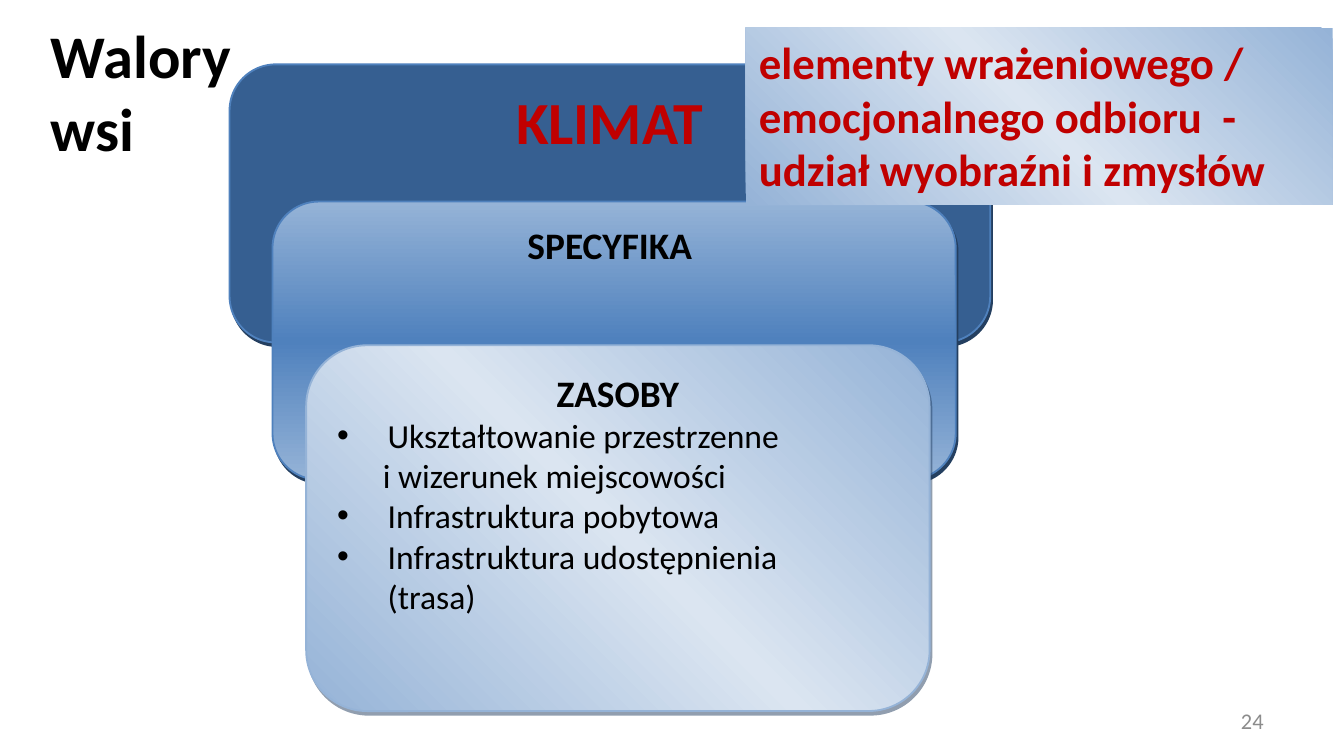
from copy import deepcopy

from lxml import etree
from pptx import Presentation
from pptx.dml.color import RGBColor
from pptx.enum import shapes, text
from pptx.oxml.ns import qn
from pptx.util import Pt

COLORS = {
    "navy": "365F91",
    "blue": "4F81BD",
    "soft": "95B3D7",
    "pale": "DBE5F1",
    "shade": "243F60",
    "red": "C00000",
    "black": "000000",
    "gray": "8C8C8C",
}
FONT = "Calibri"
BULLET_INDENT = 27
RESOURCES = [
    ("Ukształtowanie przestrzenne", True),
    ("i wizerunek miejscowości", False),
    ("Infrastruktura pobytowa", True),
    ("Infrastruktura udostępnienia \v(trasa)", True),
]


def color(name):
    return RGBColor.from_string(COLORS[name])


def format_paragraph(paragraph, size, color_name, bold=False, align=text.PP_ALIGN.LEFT):
    paragraph.alignment = align
    for run in paragraph.runs:
        run.font.name = FONT
        run.font.size = Pt(size)
        run.font.bold = bold
        run.font.color.rgb = color(color_name)


def add_plain_shape(parent, kind, left, top, width, height):
    shape = parent.add_shape(kind, Pt(left), Pt(top), Pt(width), Pt(height))
    shape.shadow.inherit = False
    shape.line.fill.background()
    shape.text_frame.word_wrap = True
    shape.text_frame.vertical_anchor = text.MSO_ANCHOR.TOP
    return shape


def fill_gradient(shape, names, angle):
    """Spread three colours evenly; the angle runs counter-clockwise."""
    shape.fill.gradient()
    shape.fill.gradient_angle = angle
    stop_list = shape.element.spPr.find(qn("a:gradFill")).find(qn("a:gsLst"))
    stop_list.insert(1, deepcopy(stop_list[0]))
    for index, (stop, name) in enumerate(zip(shape.fill.gradient_stops, names)):
        stop.position = index / 2
        stop.color.rgb = color(name)


def add_shadow(shape, opacity):
    effects = shape.element.spPr.find(qn("a:effectLst"))
    shadow = etree.SubElement(effects, qn("a:outerShdw"), blurRad="0",
                              dist=str(Pt(2.2)), dir=str(63 * 60000),
                              algn="ctr", rotWithShape="0")
    shade = etree.SubElement(shadow, qn("a:srgbClr"), val=COLORS["shade"])
    etree.SubElement(shade, qn("a:alpha"), val=str(opacity * 1000))


def add_bullet(paragraph):
    properties = paragraph._p.get_or_add_pPr()
    properties.set("marL", str(Pt(BULLET_INDENT)))
    properties.set("indent", str(-Pt(BULLET_INDENT)))
    etree.SubElement(properties, qn("a:buFont"), typeface="Arial")
    etree.SubElement(properties, qn("a:buChar"), char="•")


def add_panel(group, box, heading, size, heading_color, line_color, opacity=100):
    panel = add_plain_shape(group.shapes, shapes.MSO_SHAPE.ROUNDED_RECTANGLE, *box)
    panel.line.color.rgb = color(line_color)
    panel.line.width = Pt(1)
    add_shadow(panel, opacity)
    panel.text_frame.text = heading
    format_paragraph(panel.text_frame.paragraphs[0], size, heading_color, True,
                     text.PP_ALIGN.CENTER)
    return panel


def add_layers(slide, left, top):
    """Three stacked panels, from the climate at the back to the resources."""
    group = slide.shapes.add_group_shape()

    climate = add_panel(group, (left, top, 407.5, 149), "KLIMAT", 32, "red", "blue")
    climate.fill.solid()
    climate.fill.fore_color.rgb = color("navy")

    character = add_panel(group, (left + 23, top + 73.5, 366, 149),
                          "SPECYFIKA ", 20, "black", "blue")
    fill_gradient(character, ("soft", "blue", "soft"), 270)

    resources = add_panel(group, (left + 41, top + 150.5, 334, 196),
                          "ZASOBY", 20, "black", "soft", 50)
    fill_gradient(resources, ("soft", "pale", "soft"), 45)
    for wording, bulleted in RESOURCES:
        paragraph = resources.text_frame.add_paragraph()
        paragraph.text = wording
        if bulleted:
            add_bullet(paragraph)
        else:
            paragraph._p.get_or_add_pPr().set("marL", str(Pt(24.5)))
        format_paragraph(paragraph, 18, "black")


def add_title(slide, left, top, width, height):
    title = slide.shapes.title
    title.left, title.top, title.width, title.height = map(Pt, (left, top, width, height))
    frame = title.text_frame
    frame.text = "Walory \vwsi"
    frame.auto_size = text.MSO_AUTO_SIZE.NONE
    frame.vertical_anchor = text.MSO_ANCHOR.MIDDLE
    format_paragraph(frame.paragraphs[0], 32.4, "black", True)


def add_callout(slide, left, top, width, height):
    callout = add_plain_shape(slide.shapes, shapes.MSO_SHAPE.RECTANGLE,
                              left, top, width, height)
    fill_gradient(callout, ("soft", "pale", "soft"), 45)
    callout.text_frame.text = ("elementy wrażeniowego / emocjonalnego odbioru  - "
                               "udział wyobraźni i zmysłów")
    callout.text_frame.auto_size = text.MSO_AUTO_SIZE.SHAPE_TO_FIT_TEXT
    format_paragraph(callout.text_frame.paragraphs[0], 24, "red", True)


def add_page_number(slide, left, top, width, height):
    box = slide.shapes.add_textbox(Pt(left), Pt(top), Pt(width), Pt(height))
    frame = box.text_frame
    frame.word_wrap = True
    frame.vertical_anchor = text.MSO_ANCHOR.MIDDLE
    frame.text = "24"
    format_paragraph(frame.paragraphs[0], 12, "gray", align=text.PP_ALIGN.RIGHT)


def main():
    presentation = Presentation()
    presentation.slide_width, presentation.slide_height = Pt(720), Pt(405)
    slide = presentation.slides.add_slide(presentation.slide_layouts[5])
    add_title(slide, 20, 15, 459.5, 67)
    add_layers(slide, 123, 34.5)
    add_callout(slide, 399.5, 15, 314.5, 94.5)
    add_page_number(slide, 516, 375.5, 168, 21.5)
    presentation.save("out.pptx")


if __name__ == "__main__":
    main()
